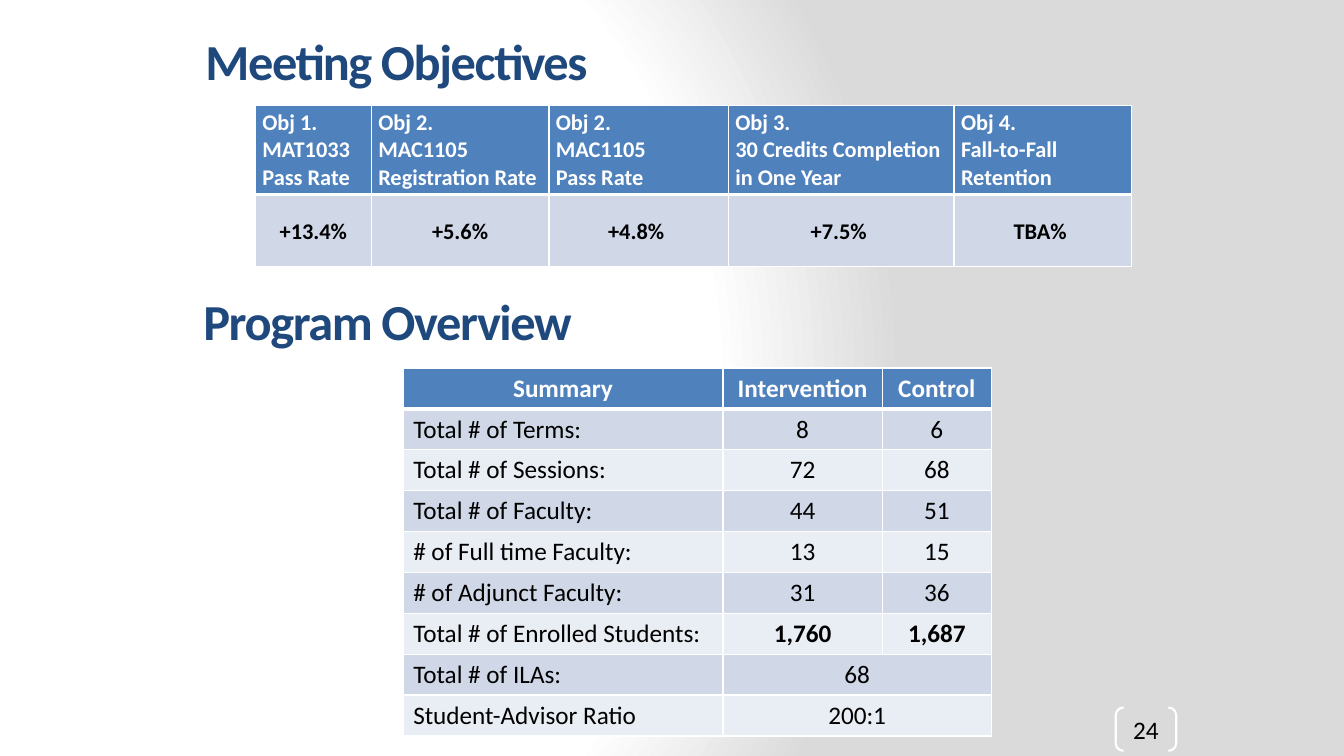
from lxml.etree import SubElement
from pptx import Presentation
from pptx.dml.color import RGBColor
from pptx.enum.shapes import MSO_SHAPE
from pptx.enum.text import MSO_ANCHOR, PP_ALIGN
from pptx.oxml import parse_xml
from pptx.oxml.ns import nsdecls, qn
from pptx.util import Pt

WHITE, BLACK, NAVY = "FFFFFF", "000000", "1F497D"
HEADER, BAND_DARK, BAND_LIGHT = "4F81BD", "D0D8E8", "E9EDF4"

OBJECTIVES = [
    ("Obj 1.\nMAT1033 Pass Rate", "+13.4%"),
    ("Obj 2.\nMAC1105 Registration Rate", "+5.6%"),
    ("Obj 2.\nMAC1105\nPass Rate", "+4.8% "),
    ("Obj 3.\n30 Credits Completion in One Year", "+7.5% "),
    ("Obj 4.\nFall-to-Fall Retention", "TBA% "),
]
OVERVIEW = [
    ("Summary", "Intervention", "Control"),
    ("Total # of Terms:", "8", "6"),
    ("Total # of Sessions:", "72", "68"),
    ("Total # of Faculty:", "44", "51"),
    ("# of Full time Faculty:", "13", "15"),
    ("# of Adjunct Faculty:", "31", "36"),
    ("Total # of Enrolled Students:", "1,760", "1,687"),
    ("Total # of ILAs:", "68"),
    ("Student-Advisor Ratio", "200:1"),
]


def color(value):
    return RGBColor.from_string(value)


def write(frame, text, size=18, ink=BLACK, bold=False, align=PP_ALIGN.LEFT, spacing=None):
    """Write one paragraph for each line of text."""
    for index, line in enumerate(text.split("\n")):
        para = frame.add_paragraph() if index else frame.paragraphs[0]
        para.alignment = align
        span = para.add_run()
        span.text = line
        span.font.name = "Calibri"
        span.font.size = Pt(size)
        span.font.bold = bold
        span.font.color.rgb = color(ink)
        if spacing is not None:
            span.font._element.set("spc", str(spacing * 100))


def paint_background(page):
    stops = "".join(
        f'<a:gs pos="{place * 1000}"><a:srgbClr val="{tone}"/></a:gs>'
        for place, tone in [(0, WHITE), (75, WHITE), (100, "DADADA")])
    background = parse_xml(
        f'<p:bg {nsdecls("p", "a")}><p:bgPr><a:gradFill rotWithShape="1">'
        f'<a:gsLst>{stops}</a:gsLst><a:path path="circle">'
        '<a:fillToRect l="20000" t="50000" r="100000" b="50000"/></a:path>'
        '</a:gradFill><a:effectLst/></p:bgPr></p:bg>')
    page._element.cSld.insert(0, background)


def add_heading(page, text, left, top, width, height):
    box = page.shapes.add_textbox(Pt(left), Pt(top), Pt(width), Pt(height))
    frame = box.text_frame
    frame.word_wrap = True
    frame.vertical_anchor = MSO_ANCHOR.MIDDLE
    write(frame, text, size=36, ink=NAVY, bold=True, spacing=-1)


def add_grid(page, left, top, widths, heights):
    """Add a table without its built-in style options."""
    table = page.shapes.add_table(
        len(heights), len(widths), Pt(left), Pt(top), Pt(sum(widths)), Pt(sum(heights))).table
    table.first_row = table.horz_banding = False
    for column, width in zip(table.columns, widths):
        column.width = Pt(width)
    for row, height in zip(table.rows, heights):
        row.height = Pt(height)
    return table


def style_cell(cell, fill, bottom=1):
    properties = cell._tc.get_or_add_tcPr()
    for side, width in [("L", 1), ("R", 1), ("T", 1), ("B", bottom)]:
        line = SubElement(properties, qn(f"a:ln{side}"), w=str(Pt(width)))
        SubElement(SubElement(line, qn("a:solidFill")), qn("a:srgbClr"), val=WHITE)
    cell.fill.solid()
    cell.fill.fore_color.rgb = color(fill)


def add_objectives(page, left, top):
    table = add_grid(page, left, top, [82.8, 126.9, 128.2, 161.2, 126.7], [63.6, 51.2])
    for column, (goal, result) in enumerate(OBJECTIVES):
        head, body = table.cell(0, column), table.cell(1, column)
        for cell in (head, body):
            cell.margin_left = cell.margin_right = Pt(5)
            cell.margin_top = cell.margin_bottom = Pt(2.6)
        body.margin_bottom = Pt(0)
        body.vertical_anchor = MSO_ANCHOR.MIDDLE
        style_cell(head, HEADER, bottom=3)
        style_cell(body, BAND_DARK)
        write(head.text_frame, goal, size=16, ink=WHITE, bold=True)
        write(body.text_frame, result, size=16, bold=True, align=PP_ALIGN.CENTER)


def add_overview(page, left, top):
    table = add_grid(page, left, top, [228.4, 113.8, 78], [29.2] * len(OVERVIEW))
    for row, values in enumerate(OVERVIEW):
        header = row == 0
        fill = HEADER if header else BAND_DARK if row % 2 else BAND_LIGHT
        for column in range(3):
            style_cell(table.cell(row, column), fill, bottom=3 if header else 1)
        # A single value covers both groups
        if len(values) == 2:
            table.cell(row, 1).merge(table.cell(row, 2))
        for column, value in enumerate(values):
            enrolled = column > 0 and "Enrolled" in values[0]
            write(table.cell(row, column).text_frame, value,
                  ink=WHITE if header else BLACK, bold=header or enrolled,
                  align=PP_ALIGN.CENTER if header or column else PP_ALIGN.LEFT)


def add_page_number(page, number, left, top, width, height):
    bracket = page.shapes.add_shape(
        MSO_SHAPE.DOUBLE_BRACKET, Pt(left), Pt(top), Pt(width), Pt(height))
    bracket.adjustments[0] = 0.18
    bracket.shadow.inherit = False
    bracket.fill.background()
    bracket.line.color.rgb = color(WHITE)
    bracket.line.width = Pt(1.5)
    frame = bracket.text_frame
    frame.margin_left = frame.margin_right = frame.margin_top = frame.margin_bottom = 0
    frame.vertical_anchor = MSO_ANCHOR.MIDDLE
    write(frame, number, align=PP_ALIGN.CENTER)


def main():
    deck = Presentation()
    deck.slide_width, deck.slide_height = Pt(960), Pt(540)
    page = deck.slides.add_slide(deck.slide_layouts[6])
    paint_background(page)
    # Objectives region
    add_heading(page, "Meeting Objectives", 139.7, 10.8, 668, 65)
    add_objectives(page, 182.4, 75.4)
    # Overview region
    add_overview(page, 288, 262.9)
    add_heading(page, "Program Overview", 138.2, 196.6, 668, 65)
    # Footer
    add_page_number(page, "24", 797, 505.4, 43.2, 31)
    deck.save("out.pptx")


if __name__ == "__main__":
    main()
